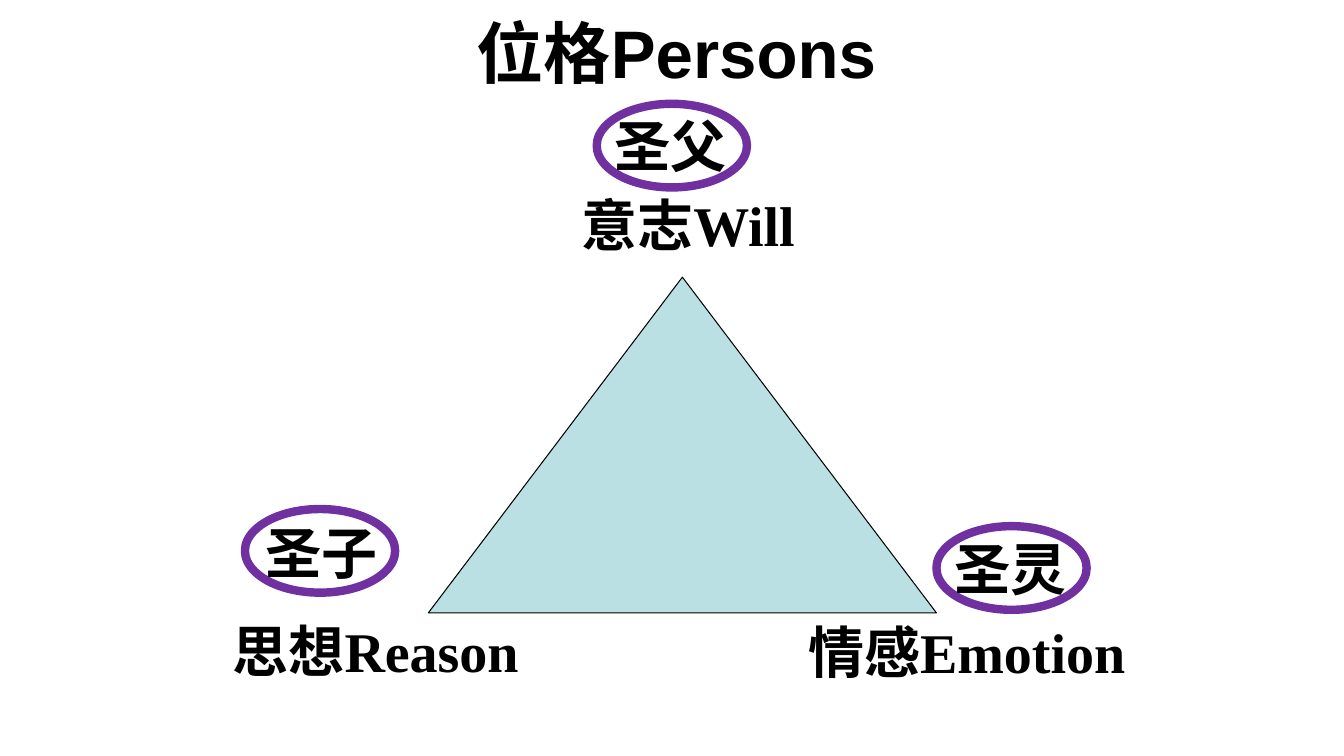
from pptx import Presentation
from pptx.util import Pt
from pptx.dml.color import RGBColor
from pptx.enum.shapes import MSO_SHAPE as Preset
from pptx.enum.text import MSO_ANCHOR as Anchor, PP_ALIGN as Align

SLIDE_SIZE = (960, 540)
BLACK, PURPLE, PALE_TEAL = "000000", "7030A0", "BBE0E3"
SERIF, CHINESE = "Times New Roman", "Noto Sans CJK SC"

TITLE = ("位格Persons", (159.12, 8.64, 648, 56.16))
TRIANGLE = (306, 198, 362.88, 239.76)
RING_SIZE = (107.28, 59.76)
NAME_SIZE = (95.76, 55.44)
PERSONS = [
    ("圣父", (426.24, 74.16), (432, 76.32)),
    ("圣子", (174.96, 363.6), (182.88, 367.2)),
    ("圣灵", (668.88, 375.84), (674.64, 378)),
]
FACULTIES = [
    ("意志Will", (408.24, 132.48, 177.84, 55.44), 1),
    ("思想Reason", (159.12, 452.16, 239.76, 39.6), 0.65),
    ("情感Emotion", (570.24, 437.76, 252, 55.44), 1),
]


def color(hex_code):
    return RGBColor.from_string(hex_code)


def add_label(words, box, font_name, size=40, spacing=1):
    label = slide.shapes.add_textbox(*map(Pt, box))
    frame = label.text_frame
    frame.word_wrap = True
    line = frame.paragraphs[0]
    line.text = words
    line.line_spacing = spacing
    line.font.name = font_name
    line.font.size = Pt(size)
    line.font.bold = True
    line.font.color.rgb = color(BLACK)
    return frame


def add_outline(preset, box, line_color, width, fill_color=None):
    outline = slide.shapes.add_shape(preset, *map(Pt, box))
    outline.shadow.inherit = False
    if fill_color:
        outline.fill.solid()
        outline.fill.fore_color.rgb = color(fill_color)
    else:
        outline.fill.background()
    outline.line.color.rgb = color(line_color)
    outline.line.width = Pt(width)


deck = Presentation()
deck.slide_width, deck.slide_height = map(Pt, SLIDE_SIZE)
slide = deck.slides.add_slide(deck.slide_layouts[6])

title = add_label(*TITLE, "Arial", 48)
title.vertical_anchor = Anchor.MIDDLE
title.paragraphs[0].alignment = Align.CENTER

add_outline(Preset.ISOSCELES_TRIANGLE, TRIANGLE, BLACK, 0.75, PALE_TEAL)

for faculty, box, spacing in FACULTIES:
    add_label(faculty, box, SERIF, spacing=spacing)

for person, ring_corner, name_corner in PERSONS:
    add_outline(Preset.OVAL, ring_corner + RING_SIZE, PURPLE, 6)
    add_label(person, name_corner + NAME_SIZE, CHINESE)

deck.save("out.pptx")
